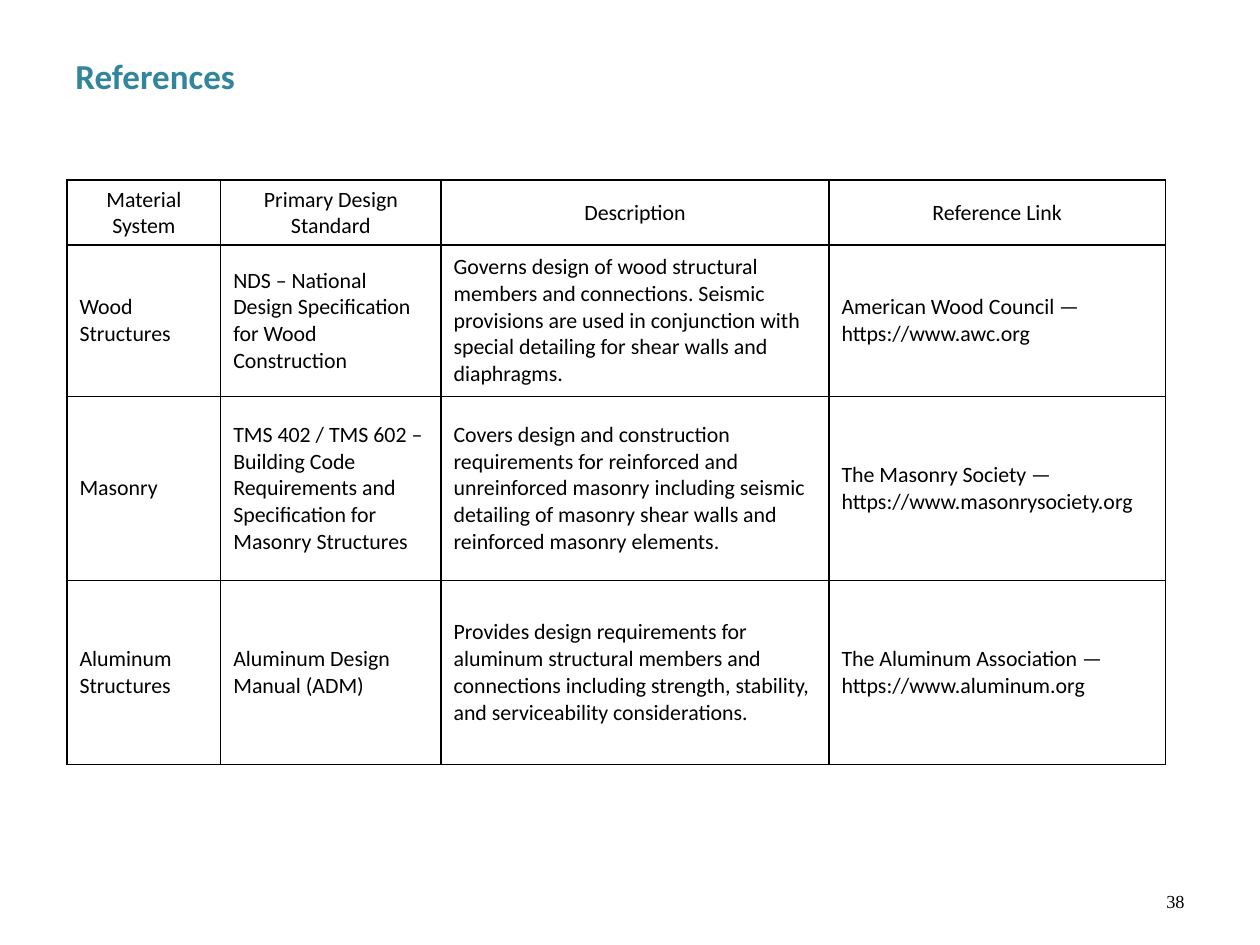
from dataclasses import dataclass

from lxml.etree import SubElement
from pptx import Presentation
from pptx.dml.color import RGBColor as RGB
from pptx.enum.text import MSO_ANCHOR as ANCHOR, PP_ALIGN as ALIGN
from pptx.oxml.ns import qn
from pptx.util import Cm, Pt


@dataclass(frozen=True)
class Theme:
    body_font: str = "Calibri"
    number_font: str = "Times New Roman"
    title_color: str = "31859C"
    text_color: str = "000000"
    number_color: str = "010000"
    border_color: str = "000000"
    title_size: float = 20
    table_size: float = 12.5
    number_size: float = 10.5
    border_width: float = 1


THEME = Theme()

COL_WIDTHS = (3.1, 4.44, 7.82, 6.78)
ROW_HEIGHTS = (1.09, 3.05, 3.71, 3.71)
REFERENCES = (
    ("Material System", "Primary Design Standard", "Description", "Reference Link"),
    ("Wood Structures",
     "NDS – National Design Specification for Wood Construction",
     "Governs design of wood structural members and connections. Seismic "
     "provisions are used in conjunction with special detailing for shear "
     "walls and diaphragms.",
     "American Wood Council — https://www.awc.org"),
    ("Masonry",
     "TMS 402 / TMS 602 – Building Code Requirements and Specification for "
     "Masonry Structures",
     "Covers design and construction requirements for reinforced and "
     "unreinforced masonry including seismic detailing of masonry shear walls "
     "and reinforced masonry elements.",
     "The Masonry Society — https://www.masonrysociety.org"),
    ("Aluminum Structures",
     "Aluminum Design Manual (ADM)",
     "Provides design requirements for aluminum structural members and "
     "connections including strength, stability, and serviceability "
     "considerations.",
     "The Aluminum Association — https://www.aluminum.org"),
)


def add_run(p, text, font, size, color, bold=False):
    r = p.add_run()
    r.text = text
    r.font.name = font
    r.font.size = Pt(size)
    r.font.bold = bold
    r.font.color.rgb = RGB.from_string(color)


def add_text_box(s, left, top, width, height, anchor=ANCHOR.TOP):
    """Add a wrapping text box and return its first paragraph."""
    sp = s.shapes.add_textbox(Cm(left), Cm(top), Cm(width), Cm(height))
    tf = sp.text_frame
    tf.word_wrap = True
    tf.vertical_anchor = anchor
    return tf.paragraphs[0]


def set_borders(cell):
    # Border lines must precede the fill in the cell properties
    tc_pr = cell._tc.get_or_add_tcPr()
    for side in ("lnL", "lnR", "lnT", "lnB"):
        ln = SubElement(tc_pr, qn(f"a:{side}"), w=str(Pt(THEME.border_width)))
        fill = SubElement(ln, qn("a:solidFill"))
        SubElement(fill, qn("a:srgbClr"), val=THEME.border_color)


def fill_cell(cell, text, align):
    set_borders(cell)
    cell.fill.background()
    cell.vertical_anchor = ANCHOR.MIDDLE
    p = cell.text_frame.paragraphs[0]
    p.alignment = align
    add_run(p, text, THEME.body_font, THEME.table_size, THEME.text_color)


def add_reference_table(s, left, top):
    frame = s.shapes.add_table(
        len(ROW_HEIGHTS), len(COL_WIDTHS), Cm(left), Cm(top),
        Cm(sum(COL_WIDTHS)), Cm(sum(ROW_HEIGHTS)))
    table = frame.table
    table.first_row = table.horz_banding = False
    for column, width in zip(table.columns, COL_WIDTHS):
        column.width = Cm(width)
    for i, (row, height) in enumerate(zip(table.rows, ROW_HEIGHTS)):
        row.height = Cm(height)
        align = ALIGN.LEFT if i else ALIGN.CENTER
        for cell, text in zip(row.cells, REFERENCES[i]):
            fill_cell(cell, text, align)


def main():
    prs = Presentation()
    prs.slide_width, prs.slide_height = Cm(25.4), Cm(19.05)
    s = prs.slides.add_slide(prs.slide_layouts[6])

    # Page number
    p = add_text_box(s, 18.21, 17.65, 5.92, 1.02, ANCHOR.MIDDLE)
    p.alignment = ALIGN.RIGHT
    add_run(p, "38", THEME.number_font, THEME.number_size, THEME.number_color)

    # Title
    p = add_text_box(s, 1.27, 0.97, 9.53, 1.12)
    p.space_after = Pt(1.5)
    add_run(p, "References", THEME.body_font, THEME.title_size,
            THEME.title_color, bold=True)

    # Design standards
    add_reference_table(s, 1.35, 3.63)

    prs.save("out.pptx")


if __name__ == "__main__":
    main()
